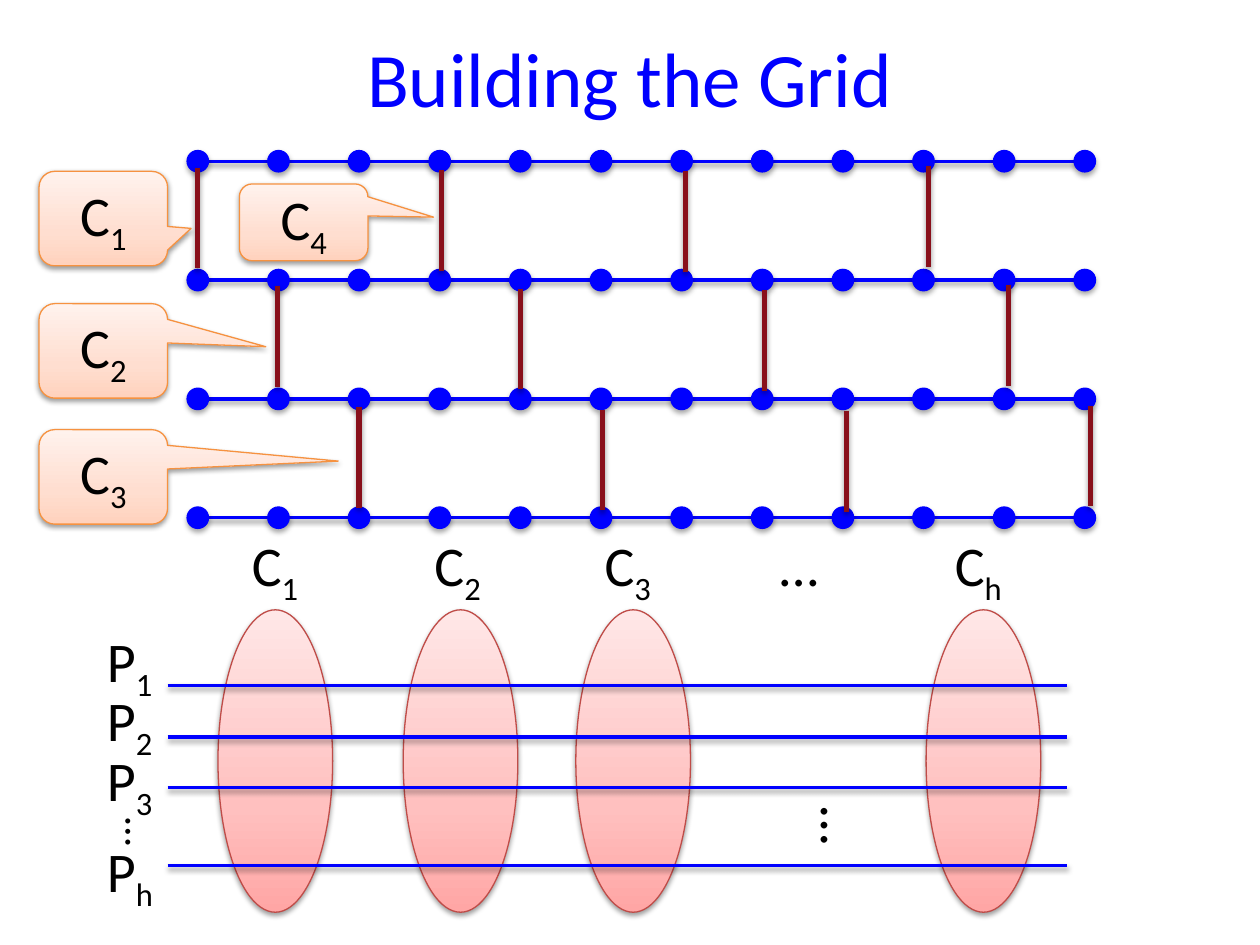
import copy

import pptx
import pptx.dml.color
import pptx.enum.shapes
import pptx.enum.text
import pptx.oxml
import pptx.oxml.ns
import pptx.util

Inches = pptx.util.Inches
Pt = pptx.util.Pt
RGBColor = pptx.dml.color.RGBColor
Shape = pptx.enum.shapes.MSO_SHAPE
Align = pptx.enum.text.PP_ALIGN
Anchor = pptx.enum.text.MSO_ANCHOR

BLUE = RGBColor(0x00, 0x00, 0xFF)
BLACK = RGBColor(0x00, 0x00, 0x00)
DARK_RED = RGBColor(0x89, 0x10, 0x1B)
ORANGE = RGBColor(0xF6, 0x92, 0x40)
RED = RGBColor(0xBF, 0x4C, 0x48)
PEACH_SHADES = (RGBColor(0xFF, 0xD2, 0xBD), RGBColor(0xFF, 0xDE, 0xD0), RGBColor(0xFF, 0xF2, 0xED))
PINK_SHADES = (RGBColor(0xFF, 0xA6, 0xA5), RGBColor(0xFF, 0xC0, 0xBF), RGBColor(0xFF, 0xE7, 0xE7))


class GridSlide:
    font = "Calibri"
    shade_positions = (0, 0.35, 1)

    def __init__(self, slide):
        self.slide = slide

    def add_run(self, paragraph, text, size, color=BLACK, subscript=False):
        run = paragraph.add_run()
        run.text = text
        run.font.name = self.font
        run.font.size = Pt(size)
        run.font.color.rgb = color
        if subscript:
            run.font._element.set("baseline", "-25000")

    def add_symbol(self, paragraph, letter, index, size=32):
        self.add_run(paragraph, letter, size)
        if index:
            self.add_run(paragraph, index, size, subscript=True)

    def shadow(self, item, alpha=38, distance=1.6):
        """Drop a soft black shadow straight down; call after the line is set."""
        properties = item._element.spPr
        properties.append(pptx.oxml.parse_xml(
            f'<a:effectLst {pptx.oxml.ns.nsdecls("a")}>'
            f'<a:outerShdw blurRad="{Pt(3.1)}" dist="{Pt(distance)}" dir="5400000" rotWithShape="0">'
            f'<a:srgbClr val="000000"><a:alpha val="{alpha * 1000}"/></a:srgbClr>'
            '</a:outerShdw></a:effectLst>'))

    def shade(self, shape, colors):
        """Fill with three shades, the first one at the bottom."""
        shape.fill.gradient()
        stop_list = shape._element.xpath("./p:spPr/a:gradFill/a:gsLst")[0]
        stop_list.append(copy.deepcopy(stop_list[-1]))
        for stop, position, color in zip(shape.fill.gradient_stops, self.shade_positions, colors):
            stop.position = position
            stop.color.rgb = color
        shape.fill.gradient_angle = 90

    def title(self, text):
        title = self.slide.shapes.title
        title.left, title.top = Inches(0.5), Inches(-0.02)
        title.width, title.height = Inches(9), Inches(1.25)
        title.text_frame.vertical_anchor = Anchor.MIDDLE
        paragraph = title.text_frame.paragraphs[0]
        paragraph.alignment = Align.CENTER
        self.add_run(paragraph, text, 44, BLUE)

    def line(self, x1, y1, x2, y2, color=BLUE, width=2):
        line = self.slide.shapes.add_connector(
            pptx.enum.shapes.MSO_CONNECTOR.STRAIGHT,
            Inches(x1), Inches(y1), Inches(x2), Inches(y2))
        line.line.color.rgb = color
        line.line.width = Pt(width)
        self.shadow(line)

    def shape(self, kind, left, top, width, height, outline):
        shape = self.slide.shapes.add_shape(
            kind, Inches(left), Inches(top), Inches(width), Inches(height))
        shape.line.color.rgb = outline
        shape.line.width = Pt(0.75)
        return shape

    def dot(self, x, y, size=0.17):
        dot = self.shape(Shape.OVAL, x - size / 2, y - size / 2, size, size, BLUE)
        dot.fill.solid()
        dot.fill.fore_color.rgb = BLUE
        self.shadow(dot, 35, 1.8)

    def cluster(self, left):
        cluster = self.shape(Shape.OVAL, left, 4.84, 0.91, 2.4, RED)
        self.shade(cluster, PINK_SHADES)
        self.shadow(cluster)

    def callout(self, index, left, top, height, tip_x, tip_y):
        callout = self.shape(Shape.ROUNDED_RECTANGULAR_CALLOUT, left, top, 1.02, height, ORANGE)
        callout.adjustments[0], callout.adjustments[1] = tip_x, tip_y
        self.shade(callout, PEACH_SHADES)
        self.shadow(callout)
        callout.text_frame.vertical_anchor = Anchor.MIDDLE
        paragraph = callout.text_frame.paragraphs[0]
        paragraph.alignment = Align.CENTER
        self.add_symbol(paragraph, "C", index)

    def label(self, letter, index, left, top, width=0.63, height=0.64, size=32, rotation=0):
        label = self.slide.shapes.add_textbox(
            Inches(left), Inches(top), Inches(width), Inches(height))
        label.rotation = rotation
        label.text_frame.word_wrap = True
        self.add_symbol(label.text_frame.paragraphs[0], letter, index, size)


def draw_grid(page):
    for row in range(4):
        y = 1.28 + 0.943 * row
        page.line(1.64, y, 8.62, y)
        for column in range(12):
            page.dot(1.57 + 0.64 * column, y)

    rung_starts = ((1.57, 1.33), (2.2, 2.27), (2.85, 3.23))
    for repeat, shift in enumerate((0, 0.02, 0.03, -0.01)):
        for start_x, start_y in rung_starts:
            x, y = start_x + 1.934 * repeat, start_y + shift
            page.line(x, y, x, y + 0.8, DARK_RED, 3)

    page.callout("1", 0.31, 1.36, 0.75, 0.683, 0.104)
    page.callout("2", 0.31, 2.41, 0.75, 1.264, -0.044)
    page.callout("3", 0.31, 3.41, 0.75, 1.828, -0.167)
    page.callout("4", 1.9, 1.46, 0.61, 1.01, -0.068)


def draw_clusters_and_paths(page):
    for left in (7.35, 4.57, 3.2, 1.73):
        page.cluster(left)
    for y in (5.44, 5.85, 6.25, 6.87):
        page.line(1.33, y, 8.47, y)

    for letter, index, left in (("C", "1", 1.9), ("C", "2", 3.35), ("C", "3", 4.7),
                                ("…", "", 6.09), ("C", "h", 7.48)):
        page.label(letter, index, left, 4.16)
    for index, top in (("1", 4.92), ("2", 5.39), ("3", 5.87), ("h", 6.59)):
        page.label("P", index, 0.75, top)
    page.label("…", "", 6.41, 6.26, width=0.56, rotation=90)
    page.label("…", "", 0.85, 6.42, width=0.56, height=0.5, size=24, rotation=90)


def main():
    deck = pptx.Presentation()
    deck.slide_width, deck.slide_height = Inches(10), Inches(7.5)
    page = GridSlide(deck.slides.add_slide(deck.slide_layouts.get_by_name("Title Only")))
    page.title("Building the Grid")
    draw_grid(page)
    draw_clusters_and_paths(page)
    deck.save("out.pptx")


if __name__ == "__main__":
    main()
